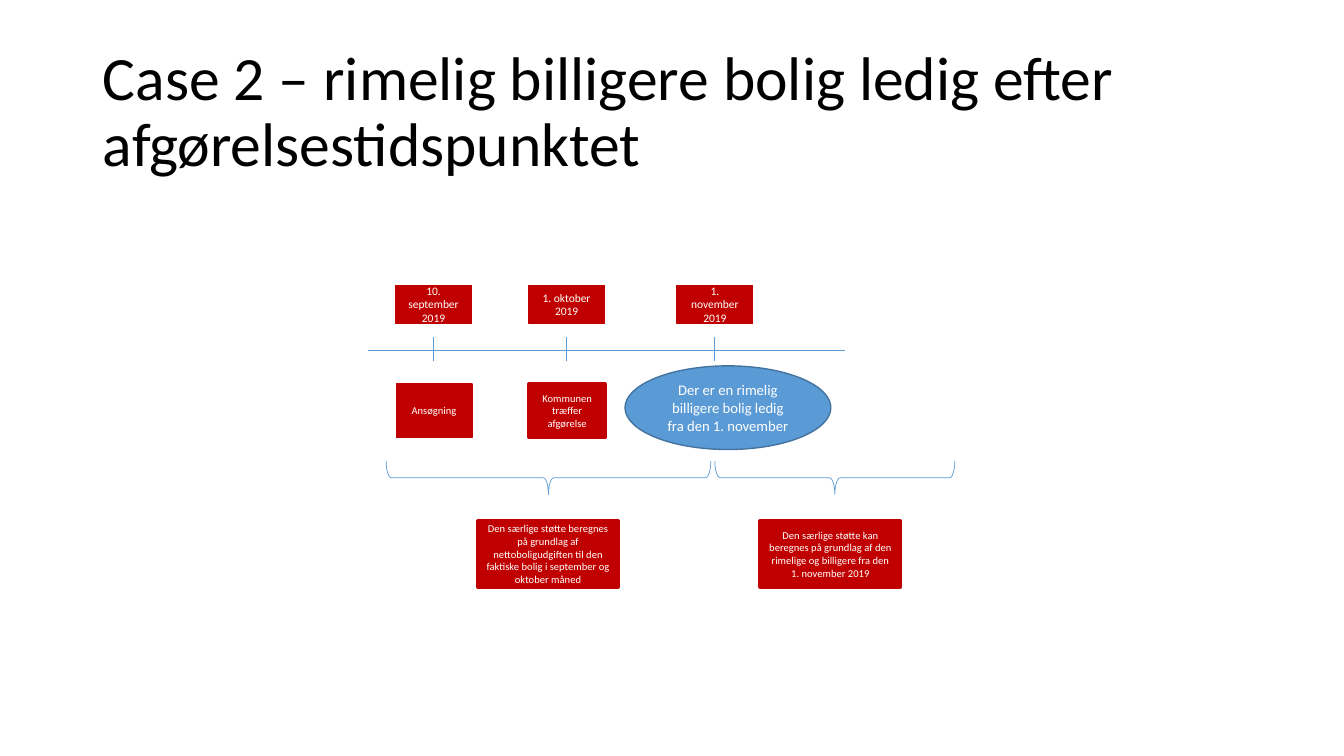
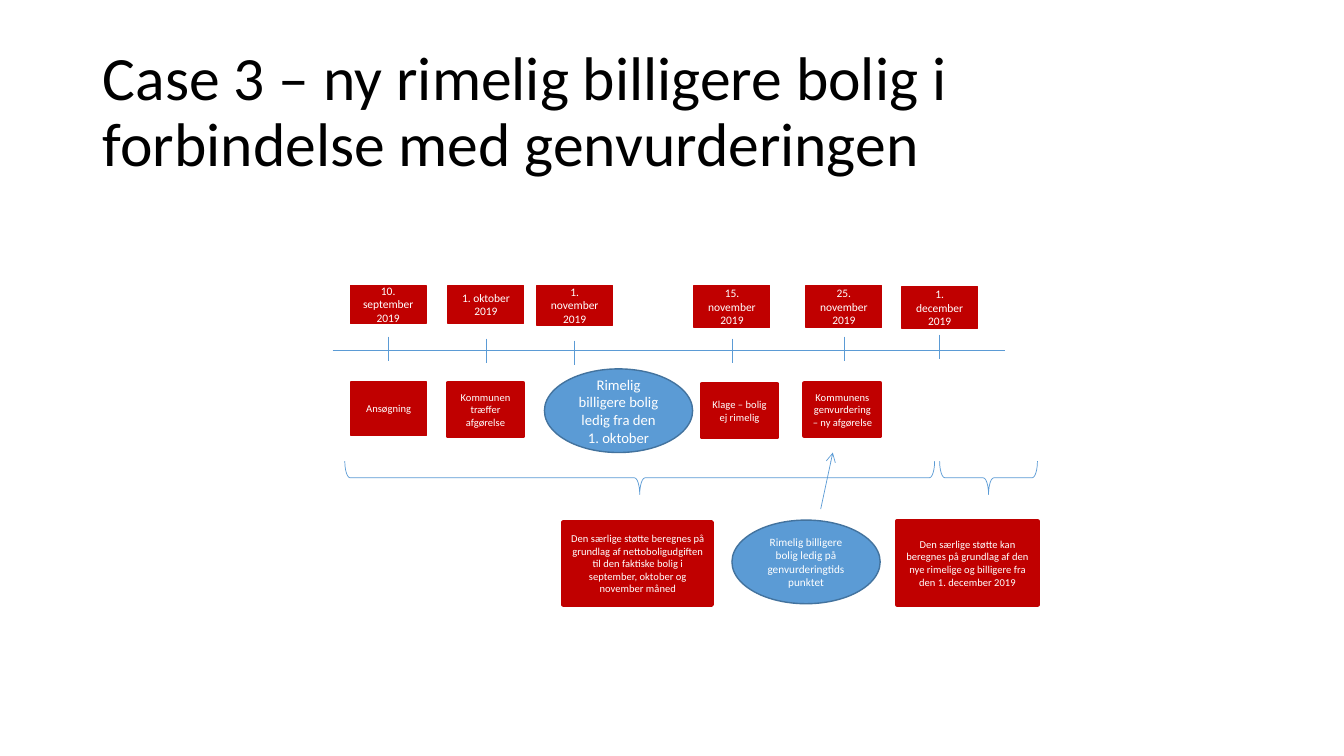
from dataclasses import dataclass

from lxml import etree
from pptx import Presentation
from pptx.dml.color import RGBColor
from pptx.enum.shapes import MSO_CONNECTOR, MSO_SHAPE
from pptx.enum.text import MSO_ANCHOR, MSO_AUTO_SIZE, PP_ALIGN
from pptx.oxml.ns import qn
from pptx.util import Inches, Pt

RECTANGLE = MSO_SHAPE.RECTANGLE
OVAL = MSO_SHAPE.OVAL
LEFT_BRACE = MSO_SHAPE.LEFT_BRACE
STRAIGHT = MSO_CONNECTOR.STRAIGHT
MIDDLE = MSO_ANCHOR.MIDDLE
NO_AUTOFIT = MSO_AUTO_SIZE.NONE
LEFT, CENTER = PP_ALIGN.LEFT, PP_ALIGN.CENTER
TITLE_AND_CONTENT = 1


@dataclass(frozen=True)
class Theme:
    font: str = "Calibri"
    black: RGBColor = RGBColor(0x00, 0x00, 0x00)
    white: RGBColor = RGBColor(0xFF, 0xFF, 0xFF)
    red: RGBColor = RGBColor(0xC0, 0x00, 0x00)
    blue: RGBColor = RGBColor(0x5B, 0x9B, 0xD5)
    dark_blue: RGBColor = RGBColor(0x43, 0x73, 0x9E)
    title_size: float = 44
    event_size: float = 10.5
    date_size: float = 8.2
    small_event_size: float = 8
    note_size: float = 7.5
    rule_width: float = 0.5
    box_border: float = 1
    note_border: float = 3


@dataclass(frozen=True)
class Milestone:
    """A date on the timeline, centred on its tick."""
    center: float
    date: str
    tick_top: float = 3.34
    box_height: float = 0.38
    box_top: float = 2.83


THEME = Theme()
TITLE_AREA = (0.92, 0.4, 11.5, 1.45)
BOX_WIDTH = 0.75
CAPTION_HEIGHT = 0.53
EVENT_HEIGHT = 0.83
TICK_HEIGHT = 0.24
TIMELINE_Y = 3.48
BRACE_Y = 4.74
BRACE_DEPTH = 0.33
BOX_INSETS = (0.1, 0.05)
NOTE_INSETS = (0.07, 0.04)


def place(shape, area):
    shape.left, shape.top, shape.width, shape.height = map(Inches, area)


def write(shape, texts, size, color=THEME.white, align=CENTER, insets=BOX_INSETS):
    """Fill a shape with one formatted paragraph for each text."""
    frame = shape.text_frame
    frame.word_wrap = True
    frame.auto_size = NO_AUTOFIT
    frame.vertical_anchor = MIDDLE
    frame.margin_left = frame.margin_right = Inches(insets[0])
    frame.margin_top = frame.margin_bottom = Inches(insets[1])
    for index, text in enumerate(texts):
        para = frame.add_paragraph() if index else frame.paragraphs[0]
        para.alignment = align
        para.space_before = Pt(0)
        span = para.add_run()
        span.text = text
        span.font.name = THEME.font
        span.font.size = Pt(size)
        span.font.color.rgb = color


def paint(shape, fill, border, width):
    shape.fill.solid()
    shape.fill.fore_color.rgb = fill
    shape.line.color.rgb = border
    shape.line.width = Pt(width)


def add_figure(page, kind, area):
    shape = page.shapes.add_shape(kind, *map(Inches, area))
    shape.shadow.inherit = False
    return shape


def add_date(page, milestone):
    area = (milestone.center - BOX_WIDTH / 2, milestone.box_top,
            BOX_WIDTH, milestone.box_height)
    box = add_figure(page, RECTANGLE, area)
    paint(box, THEME.red, THEME.red, THEME.box_border)
    write(box, [milestone.date], THEME.date_size)


def add_note(page, area, text):
    box = add_figure(page, RECTANGLE, area)
    paint(box, THEME.red, THEME.red, THEME.note_border)
    write(box, [text], THEME.note_size, insets=NOTE_INSETS)


def add_caption(page, left, top, text):
    add_note(page, (left, top, BOX_WIDTH, CAPTION_HEIGHT), text)


def add_event(page, left, top, width, texts, size=THEME.event_size):
    oval = add_figure(page, OVAL, (left, top, width, EVENT_HEIGHT))
    paint(oval, THEME.blue, THEME.dark_blue, THEME.box_border)
    write(oval, texts, size)


def add_brace(page, start, end):
    """Draw a brace from start to end with its tip pointing down."""
    length = end - start
    area = ((start + end - BRACE_DEPTH) / 2, BRACE_Y - length / 2,
            BRACE_DEPTH, length)
    brace = add_figure(page, LEFT_BRACE, area)
    brace.adjustments[0] = 0.16
    brace.adjustments[1] = 0.5
    brace.rotation = 90
    brace._element.spPr.find(qn("a:xfrm")).set("flipH", "1")
    brace.fill.background()
    brace.line.color.rgb = THEME.blue
    brace.line.width = Pt(THEME.rule_width)


def add_rule(page, start, end, arrow=False):
    rule = page.shapes.add_connector(STRAIGHT, *map(Inches, (*start, *end)))
    rule.line.color.rgb = THEME.blue
    rule.line.width = Pt(THEME.rule_width)
    if arrow:
        etree.SubElement(rule.line._get_or_add_ln(), qn("a:tailEnd"), type="arrow")
    etree.SubElement(rule._element.spPr, qn("a:effectLst"))


def add_timeline(page, start, end, milestones):
    add_rule(page, (start, TIMELINE_Y), (end, TIMELINE_Y))
    for milestone in milestones:
        x, top = milestone.center, milestone.tick_top
        add_rule(page, (x, top), (x, top + TICK_HEIGHT))
        add_date(page, milestone)


def add_page(deck, title, application_left, application_top):
    """Add a slide with its title and the application box in the body."""
    page = deck.slides.add_slide(deck.slide_layouts[TITLE_AND_CONTENT])
    heading = page.shapes.title
    place(heading, TITLE_AREA)
    write(heading, [title], THEME.title_size, THEME.black, LEFT)
    heading.text_frame.paragraphs[0].line_spacing = 0.9

    body = page.placeholders[1]
    place(body, (application_left, application_top, BOX_WIDTH, CAPTION_HEIGHT))
    paint(body, THEME.red, THEME.red, THEME.box_border)
    write(body, ["Ansøgning"], THEME.note_size)
    properties = body.text_frame.paragraphs[0]._p.get_or_add_pPr()
    properties.set("marL", "0")
    properties.set("indent", "0")
    etree.SubElement(properties, qn("a:buNone"))
    return page


def build_case_2(deck):
    page = add_page(
        deck, "Case 2 – rimelig billigere bolig ledig efter afgørelsestidspunktet",
        3.93, 3.81)
    add_timeline(page, 3.65, 8.38, [
        Milestone(4.3, "10. september 2019"),
        Milestone(5.62, "1. oktober 2019"),
        Milestone(7.09, "1. november 2019"),
    ])
    add_caption(page, 5.25, 3.81, "Kommunen træffer afgørelse")
    add_event(page, 6.2, 3.63, 2.04,
              ["Der er en rimelig billigere bolig ledig fra den 1. november"])
    add_brace(page, 3.83, 7.05)
    add_brace(page, 7.09, 9.47)
    add_note(page, (4.74, 5.17, 1.39, 0.65),
             "Den særlige støtte beregnes på grundlag af nettoboligudgiften "
             "til den faktiske bolig i september og oktober måned")
    add_note(page, (7.54, 5.17, 1.39, 0.65),
             "Den særlige støtte kan beregnes på grundlag af den rimelige "
             "og billigere fra den 1. november 2019")


def build_case_3(deck):
    page = add_page(
        deck, "Case 3 – ny rimelig billigere bolig i forbindelse med genvurderingen",
        3.48, 3.79)
    add_timeline(page, 3.3, 9.97, [
        Milestone(3.85, "10. september 2019"),
        Milestone(4.82, "1. oktober 2019", 3.36),
        Milestone(5.7, "1. november 2019", 3.38, 0.4),
        Milestone(7.26, "15. november 2019", 3.36, 0.42),
        Milestone(8.37, "25. november 2019", 3.34, 0.42),
        Milestone(9.32, "1. december 2019", 3.32, 0.42, 2.84),
    ])
    add_caption(page, 4.44, 3.8, "Kommunen træffer afgørelse")
    add_caption(page, 6.96, 3.81, "Klage – bolig ej rimelig")
    add_caption(page, 7.98, 3.8, "Kommunens genvurdering – ny afgørelse")
    add_event(page, 5.4, 3.66, 1.47,
              ["Rimelig billigere bolig ledig fra den 1. oktober"])
    add_event(page, 7.26, 5.16, 1.47,
              ["Rimelig billigere bolig ledig på genvurderingtids", "punktet"],
              THEME.small_event_size)
    add_rule(page, (8.14, 5.05), (8.26, 4.49), arrow=True)
    add_brace(page, 3.42, 9.27)
    add_brace(page, 9.32, 10.29)
    add_note(page, (5.59, 5.18, 1.47, 0.82),
             "Den særlige støtte beregnes på grundlag af nettoboligudgiften "
             "til den faktiske bolig i september, oktober og november måned")
    add_note(page, (8.9, 5.17, 1.39, 0.83),
             "Den særlige støtte kan beregnes på grundlag af den nye rimelige "
             "og billigere fra den 1. december 2019")


def main():
    deck = Presentation()
    deck.slide_width, deck.slide_height = Inches(13.33), Inches(7.5)
    build_case_2(deck)
    build_case_3(deck)
    deck.save("out.pptx")


if __name__ == "__main__":
    main()
